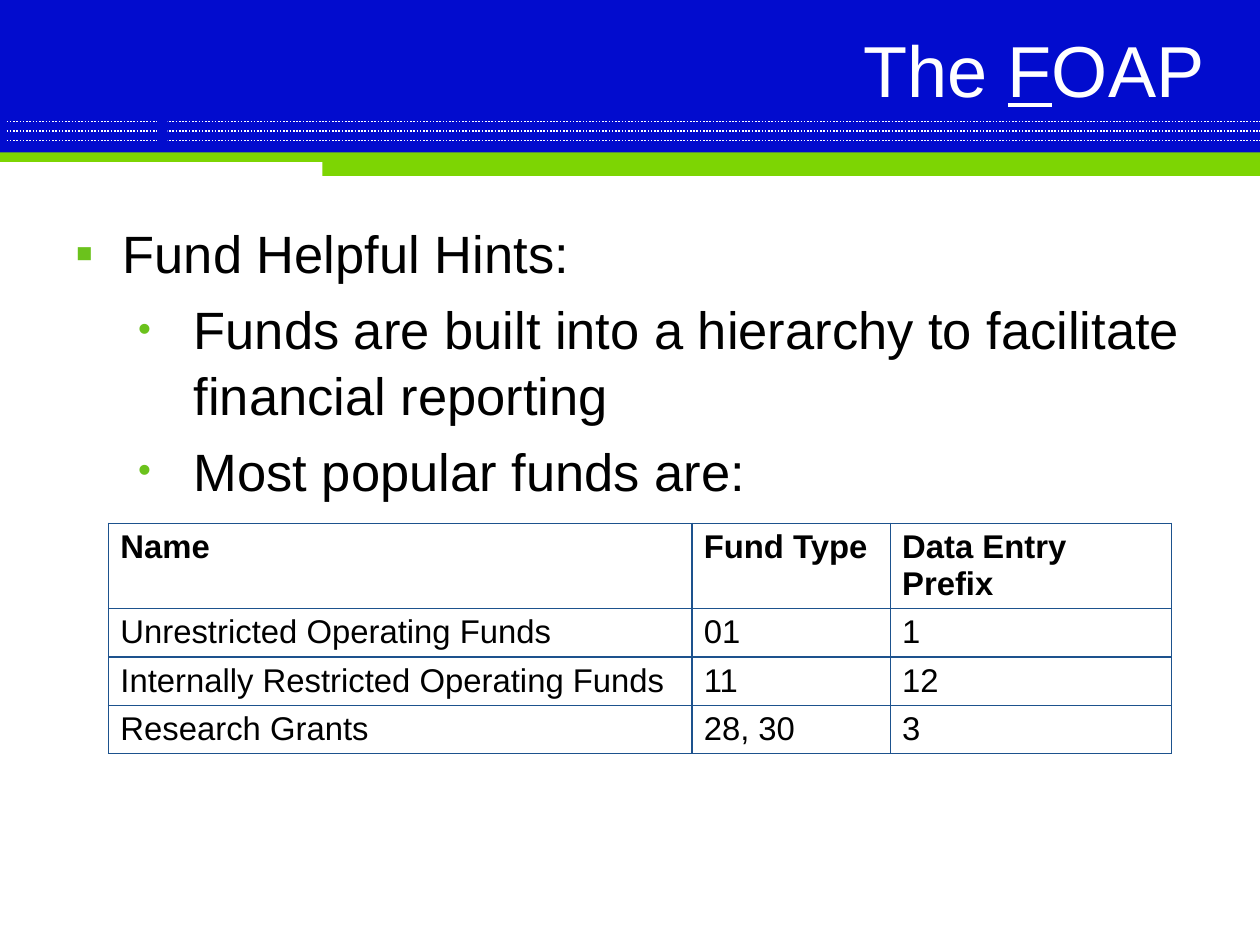
import pptx
import pptx.util
import pptx.dml.color
import pptx.enum.dml
import pptx.enum.shapes
import pptx.enum.text
import pptx.oxml.ns
from lxml import etree

Inches, Pt = pptx.util.Inches, pptx.util.Pt
qn = pptx.oxml.ns.qn
PP = pptx.enum.text

WIDTH, HEIGHT = 10.67, 8
BLUE, GREEN, BULLET, GRID = "020CCE", "7DD503", "6BC21C", "1D528D"
WHITE, BLACK = "FFFFFF", "000000"

TITLE = [("The ", False), ("F", True), ("OAP", False)]
HINTS = [
    (0, "Fund Helpful Hints:"),
    (1, "Funds are built into a hierarchy to facilitate financial reporting"),
    (1, "Most popular funds are:"),
]
LEVELS = [
    {"left": 0.4, "hang": 0.4, "char": "▪", "size": 100},
    {"left": 1, "hang": 0.47, "char": "•", "size": 70},
]
FUNDS = [
    ("Name", "Fund Type", "Data Entry Prefix"),
    ("Unrestricted Operating Funds", "01", "1"),
    ("Internally Restricted Operating Funds", "11", "12"),
    ("Research Grants", "28, 30", "3"),
]
COLUMNS = [4.94, 1.68, 2.38]
ROWS = [0.72, 0.41, 0.41, 0.41]

HEADER = (0, 0, WIDTH, 1.33, BLUE)
DOTTED_LINES = [1.03 + 0.08 * i for i in range(3)]
BANDS = [
    (0, 1.29, WIDTH, 0.08, GREEN),
    (2.73, 1.32, 7.94, 0.17, GREEN),
    (0, 0, WIDTH, 0.08, BLUE),
] + [(x, 0, 0.05, 1.24, BLUE) for x in (0, 1.33, 1.37)]


def rgb(color):
    return pptx.dml.color.RGBColor.from_string(color)


def set_font(font, size, color, bold=False):
    font.name, font.size, font.bold = "Arial", Pt(size), bold
    font.color.rgb = rgb(color)


def add_band(slide, x, y, w, h, color):
    sp = slide.shapes.add_shape(
        pptx.enum.shapes.MSO_SHAPE.RECTANGLE,
        Inches(x), Inches(y), Inches(w), Inches(h))
    sp.shadow.inherit = False
    sp.fill.solid()
    sp.fill.fore_color.rgb = rgb(color)
    sp.line.fill.background()


def add_dotted_line(slide, y):
    line = slide.shapes.add_connector(
        pptx.enum.shapes.MSO_CONNECTOR.STRAIGHT,
        Inches(0), Inches(y), Inches(WIDTH), Inches(y))
    line.line.color.rgb = rgb(WHITE)
    line.line.width = Pt(1)
    line.line.dash_style = pptx.enum.dml.MSO_LINE.ROUND_DOT
    etree.SubElement(line._element.spPr, qn("a:effectLst"))


def place(sp, x, y, w, h, anchor):
    sp.left, sp.top, sp.width, sp.height = map(Inches, (x, y, w, h))
    tf = sp.text_frame
    tf.word_wrap = True
    tf.auto_size = PP.MSO_AUTO_SIZE.NONE
    tf.vertical_anchor = anchor
    tf.margin_left = tf.margin_right = Inches(0.11)
    tf.margin_top = tf.margin_bottom = Inches(0.05)
    return tf


def set_bullet(p, left, hang, char, size):
    pPr = p._p.get_or_add_pPr()
    pPr.set("marL", str(Inches(left)))
    pPr.set("indent", str(-Inches(hang)))
    clr = etree.SubElement(pPr, qn("a:buClr"))
    etree.SubElement(clr, qn("a:srgbClr"), val=BULLET)
    etree.SubElement(pPr, qn("a:buSzPct"), val=str(size * 1000))
    etree.SubElement(pPr, qn("a:buFont"), typeface="Arial")
    etree.SubElement(pPr, qn("a:buChar"), char=char)


def set_borders(cell):
    tcPr = cell._tc.get_or_add_tcPr()
    for i, side in enumerate(("lnL", "lnR", "lnT", "lnB")):
        ln = etree.Element(qn("a:" + side), w=str(Pt(1)))
        fill = etree.SubElement(ln, qn("a:solidFill"))
        etree.SubElement(fill, qn("a:srgbClr"), val=GRID)
        tcPr.insert(i, ln)


def fill_title(title):
    tf = place(title, 2.93, 0.27, 7.38, 0.62, PP.MSO_ANCHOR.MIDDLE)
    p = tf.paragraphs[0]
    p.alignment = PP.PP_ALIGN.RIGHT
    for text, underline in TITLE:
        r = p.add_run()
        r.text = text
        set_font(r.font, 44, WHITE)
        r.font.underline = underline


def fill_hints(body):
    tf = place(body, 0.53, 1.8, 9.6, 2.45, PP.MSO_ANCHOR.TOP)
    for i, (level, text) in enumerate(HINTS):
        p = tf.paragraphs[0] if i == 0 else tf.add_paragraph()
        p.text = text
        p.level = level
        p.line_spacing = 1.04
        p.space_before = Pt(6.4 if i else 0)
        set_bullet(p, **LEVELS[level])
        set_font(p.runs[0].font, 32, BLACK)


def add_funds(slide):
    table = slide.shapes.add_table(
        len(ROWS), len(COLUMNS), Inches(0.92), Inches(4.43),
        Inches(sum(COLUMNS)), Inches(sum(ROWS))).table
    table.horz_banding = False
    for column, width in zip(table.columns, COLUMNS):
        column.width = Inches(width)
    for i, (row, height) in enumerate(zip(table.rows, ROWS)):
        row.height = Inches(height)
        for cell, text in zip(row.cells, FUNDS[i]):
            cell.text = text
            cell.fill.background()
            set_borders(cell)
            set_font(cell.text_frame.paragraphs[0].runs[0].font, 20, BLACK, i == 0)


def main():
    prs = pptx.Presentation()
    prs.slide_width, prs.slide_height = Inches(WIDTH), Inches(HEIGHT)
    slide = prs.slides.add_slide(prs.slide_layouts[1])
    title, body = slide.placeholders
    add_band(slide, *HEADER)
    for y in DOTTED_LINES:
        add_dotted_line(slide, y)
    for band in BANDS:
        add_band(slide, *band)
    for sp in (title, body):
        slide.shapes._spTree.append(sp._element)
    fill_title(title)
    fill_hints(body)
    add_funds(slide)
    prs.save("out.pptx")


if __name__ == "__main__":
    main()
